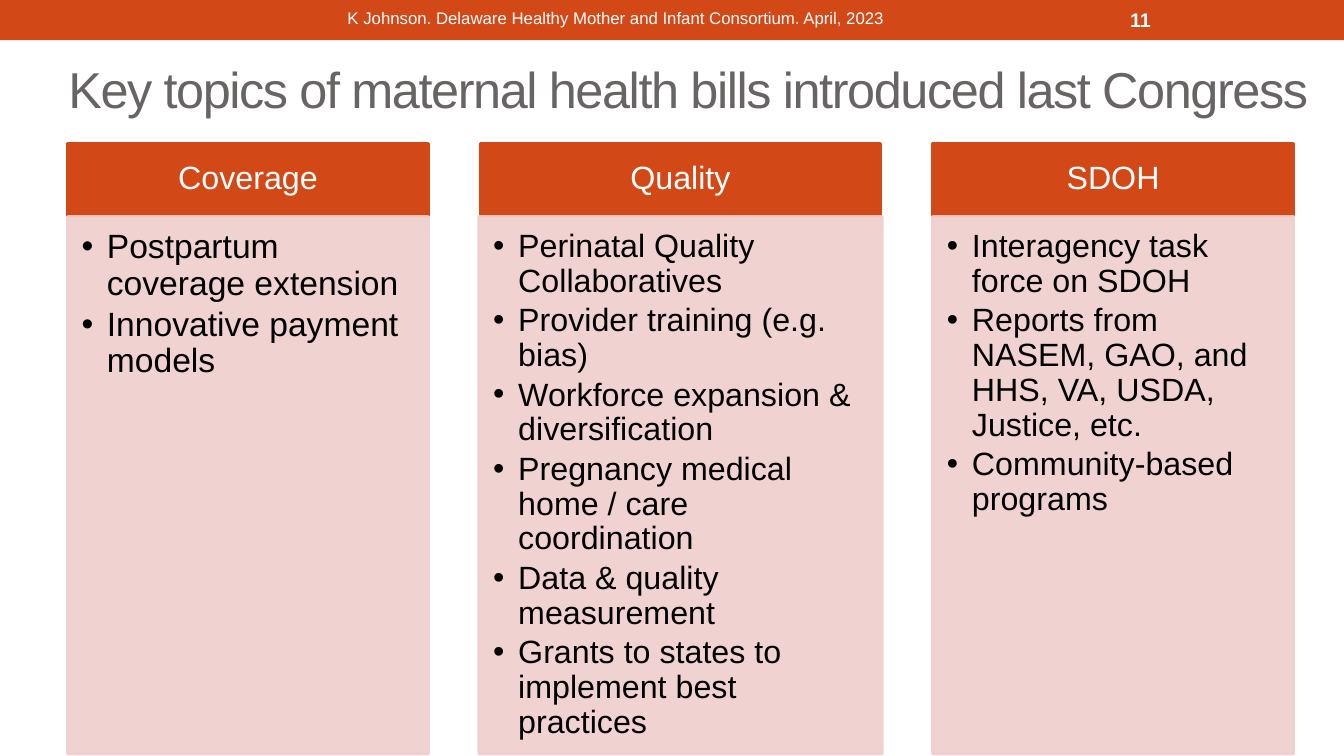
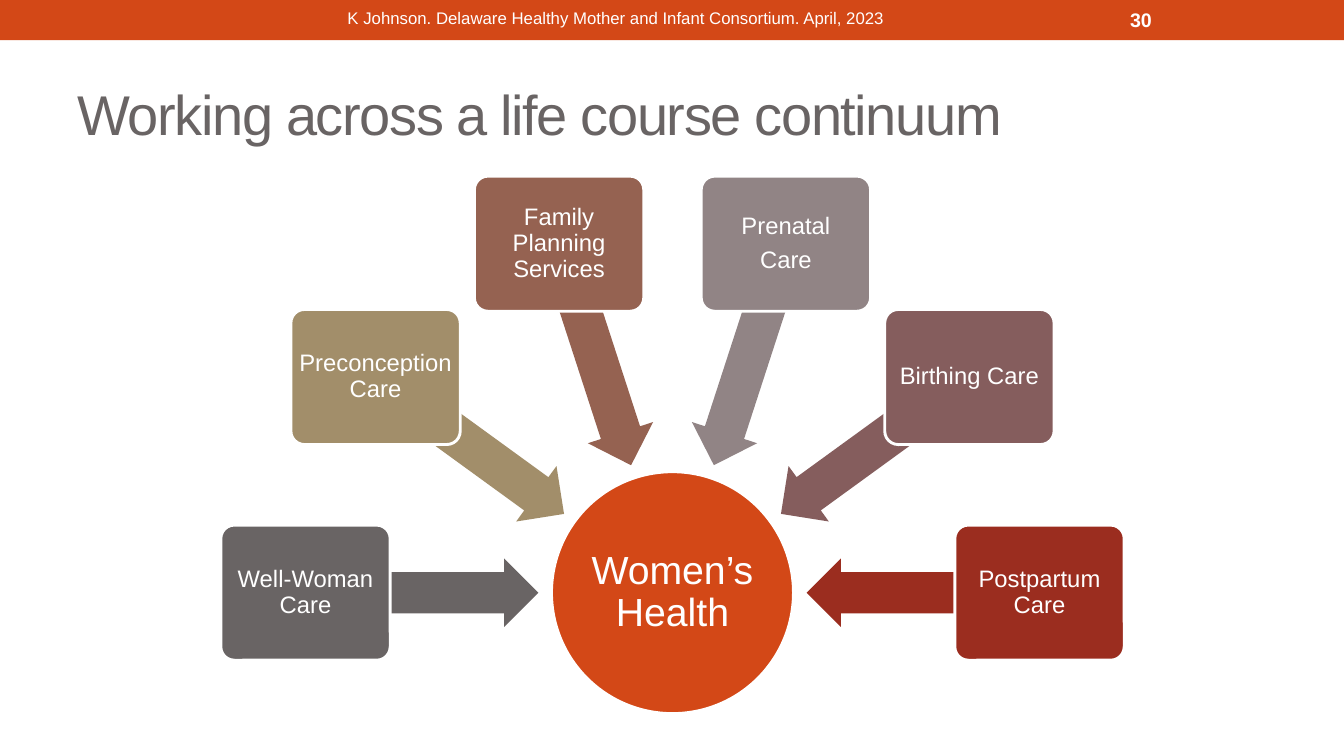
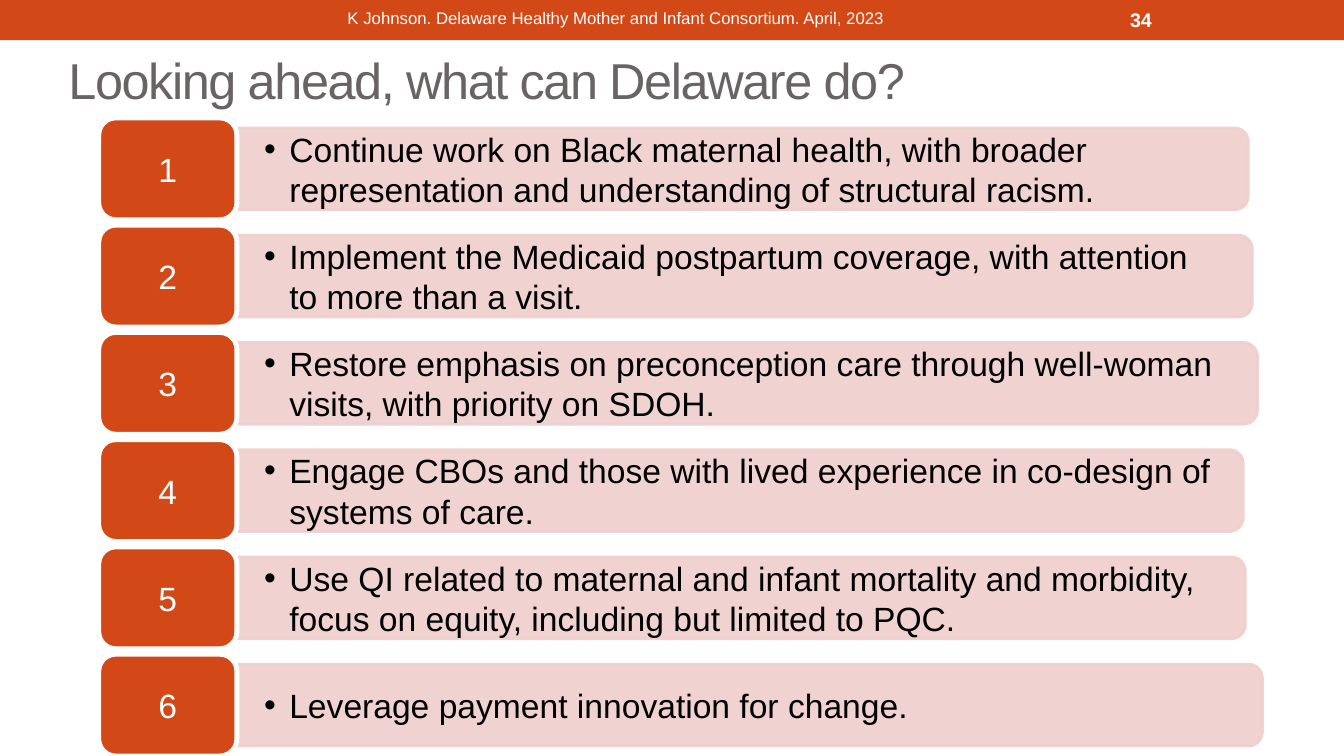
from math import cos, radians, sin

from lxml.etree import SubElement
from pptx import Presentation
from pptx.dml.color import RGBColor
from pptx.enum.shapes import MSO_SHAPE
from pptx.enum.text import MSO_ANCHOR, PP_ALIGN
from pptx.oxml.ns import qn
from pptx.util import Inches, Pt

ORANGE, PINK, GRAY = "D34817", "EFCFCC", "696464"
WHITE, BLACK = "FFFFFF", "000000"
FONT = "Arial"
FOOTER = "K Johnson. Delaware Healthy Mother and Infant Consortium. April, 2023"


def rgb(value):
    return RGBColor.from_string(value)


def write(shape, lines, size=24, color=WHITE, bold=False, align=PP_ALIGN.CENTER,
          anchor=MSO_ANCHOR.MIDDLE, insets=(0.1, 0.05, 0.1, 0.05),
          line_spacing=1.0, after=0, bullet=False, tracking=0):
    """Fill a shape with paragraphs; after is a share of the text size."""
    tf = shape.text_frame
    tf.word_wrap = True
    tf.vertical_anchor = anchor
    tf.margin_left, tf.margin_top, tf.margin_right, tf.margin_bottom = map(Inches, insets)
    for i, line in enumerate(lines):
        p = tf.add_paragraph() if i else tf.paragraphs[0]
        p.alignment = align
        p.line_spacing = line_spacing
        p.space_after = Pt(round(size * after, 1))
        if bullet:
            pPr = p._p.get_or_add_pPr()
            pPr.set("marL", str(Inches(0.25)))
            pPr.set("indent", str(Inches(-0.25)))
            SubElement(pPr, qn("a:buFont")).set("typeface", FONT)
            SubElement(pPr, qn("a:buChar")).set("char", "•")
        r = p.add_run()
        r.text = line
        r.font.name, r.font.size, r.font.bold = FONT, Pt(size), bold
        r.font.color.rgb = rgb(color)
        if tracking:
            r._r.get_or_add_rPr().set("spc", str(tracking * 100))


class Deck:
    def __init__(self):
        self.prs = Presentation()
        self.prs.slide_width, self.prs.slide_height = Inches(13.33), Inches(7.5)
        self.s = None

    def slide(self, number, title, box, size=36):
        """Start a slide with the top band, footer, number and title."""
        self.s = self.prs.slides.add_slide(self.prs.slide_layouts[6])
        self.shape(MSO_SHAPE.RECTANGLE, 0, 0, 13.33, 0.4, ORANGE)
        self.text(1.22, 0.02, 9.78, 0.31, [FOOTER], size=12)
        self.text(11.11, 0.02, 1.56, 0.36, [str(number)], size=14, bold=True,
                  align=PP_ALIGN.LEFT)
        self.text(*box, [title], size=size, color=GRAY, align=PP_ALIGN.LEFT, tracking=-1)

    def shape(self, kind, x, y, w, h, fill, line=None, width=2.08, alpha=None,
              adjust=(), rotation=0):
        sp = self.s.shapes.add_shape(kind, Inches(x), Inches(y), Inches(w), Inches(h))
        sp.shadow.inherit = False
        sp.rotation = rotation
        for i, value in enumerate(adjust):
            sp.adjustments[i] = value
        sp.fill.solid()
        sp.fill.fore_color.rgb = rgb(fill)
        if line:
            sp.line.color.rgb = rgb(line)
            sp.line.width = Pt(width)
        else:
            sp.line.fill.background()
        if alpha:
            for color in sp._element.spPr.iter(qn("a:srgbClr")):
                SubElement(color, qn("a:alpha")).set("val", str(alpha * 1000))
        return sp

    def text(self, x, y, w, h, lines, **fmt):
        sp = self.s.shapes.add_textbox(Inches(x), Inches(y), Inches(w), Inches(h))
        write(sp, lines, **fmt)

    def column(self, x, w, head, items, size, head_inset):
        """Header over a bulleted panel."""
        header = self.shape(MSO_SHAPE.RECTANGLE, x + head_inset, 1.42,
                            w - 2 * head_inset, 0.72, ORANGE, ORANGE)
        write(header, [head], size=23, insets=(0.18, 0.1, 0.18, 0.1),
              line_spacing=0.9, after=0.35)
        panel = self.shape(MSO_SHAPE.RECTANGLE, x, 2.15, w, 5.33, PINK, PINK, alpha=90)
        write(panel, items, size=size, color=BLACK, align=PP_ALIGN.LEFT,
              anchor=MSO_ANCHOR.TOP, insets=(0.14, 0.13, 0.18, 0.2),
              line_spacing=0.9, after=0.15, bullet=True)

    def spoke(self, cx, cy, angle, lines, color):
        """Arrow toward the hub and a box at its outer end."""
        dx, dy = cos(radians(angle)), sin(radians(angle))
        self.shape(MSO_SHAPE.LEFT_ARROW, cx + 2.48 * dx - 1.15, cy + 2.48 * dy - 0.34,
                   2.3, 0.68, color, adjust=(0.6, 0.5), rotation=angle)
        box = self.shape(MSO_SHAPE.ROUNDED_RECTANGLE, cx + 3.64 * dx - 0.84,
                         cy + 3.64 * dy - 0.67, 1.68, 1.34, color, WHITE, adjust=(0.1,))
        write(box, lines, size=17, insets=(0.04,) * 4, line_spacing=0.9, after=0.35)

    def step(self, y, number, line, w):
        """Numbered box with a bar that is rounded on its right side."""
        x, bar_h, box_h = 2.35, 0.81, 1.01
        mid = y + box_h / 2
        self.shape(MSO_SHAPE.ROUND_2_SAME_RECTANGLE, x + (w - bar_h) / 2, mid - w / 2,
                   bar_h, w, PINK, PINK, alpha=90, rotation=90)
        self.text(x, mid - 0.365, w - 0.04, 0.73, [line], color=BLACK,
                  align=PP_ALIGN.LEFT, insets=(0.27, 0.14, 0.27, 0.14),
                  after=0.15, bullet=True)
        box = self.shape(MSO_SHAPE.ROUNDED_RECTANGLE, 0.98, y, 1.37, box_h,
                         ORANGE, WHITE, width=3.5)
        write(box, [str(number)], after=0.35)


def topics(deck):
    deck.slide(11, "Key topics of maternal health bills introduced last Congress",
               (0.58, 0.5, 12.7, 0.75))
    columns = [
        (3.58, "Coverage", 24, 0,
         ["Postpartum coverage extension", "Innovative payment models"]),
        (4.0, "Quality", 23, 0.02,
         ["Perinatal Quality Collaboratives", "Provider training (e.g. bias)",
          "Workforce expansion & diversification",
          "Pregnancy medical home / care coordination",
          "Data & quality measurement", "Grants to states to implement best practices"]),
        (3.58, "SDOH", 23, 0,
         ["Interagency task force on SDOH",
          "Reports from NASEM, GAO, and HHS, VA, USDA, Justice, etc.",
          "Community-based programs"]),
    ]
    x = 0.67
    for w, head, size, head_inset, items in columns:
        deck.column(x, w, head, items, size, head_inset)
        x += w + 0.5


def continuum(deck):
    deck.slide(30, "Working across a life course continuum", (0.67, 0.58, 12, 1.08), size=40)
    cx, cy, radius = 6.67, 5.88, 1.2
    hub = deck.shape(MSO_SHAPE.OVAL, cx - radius, cy - radius, 2 * radius, 2 * radius,
                     ORANGE, WHITE)
    write(hub, ["Women’s Health"], size=28, insets=(0.02,) * 4, line_spacing=0.9, after=0.35)
    stages = [
        (["Well-Woman Care"], GRAY),
        (["Preconception Care"], "A28E6A"),
        (["Family Planning Services"], "956251"),
        (["Prenatal", "Care"], "918485"),
        (["Birthing Care"], "855D5D"),
        (["Postpartum Care"], "9B2D1F"),
    ]
    for i, (lines, color) in enumerate(stages):
        deck.spoke(cx, cy, 180 + 36 * i, lines, color)


def next_steps(deck):
    deck.slide(34, "Looking ahead, what can Delaware do?", (0.58, 0.45, 10.42, 0.67))
    steps = [
        ("Continue work on Black maternal health, with broader representation and "
         "understanding of structural racism.", 10.03),
        ("Implement the Medicaid postpartum coverage, with attention to more than a visit.",
         10.07),
        ("Restore emphasis on preconception care through well-woman visits, with priority "
         "on SDOH.", 10.12),
        ("Engage CBOs and those with lived experience in co-design of systems of care.", 9.98),
        ("Use QI related to maternal and infant mortality and morbidity, focus on equity, "
         "including but limited to PQC.", 10),
        ("Leverage payment innovation for change.", 10.17),
    ]
    top, bottom = 1.17, 6.49
    pitch = (bottom - top) / (len(steps) - 1)
    for i, (line, w) in enumerate(steps):
        deck.step(top + i * pitch, i + 1, line, w)


def main():
    deck = Deck()
    topics(deck)
    continuum(deck)
    next_steps(deck)
    deck.prs.save("out.pptx")


if __name__ == "__main__":
    main()
